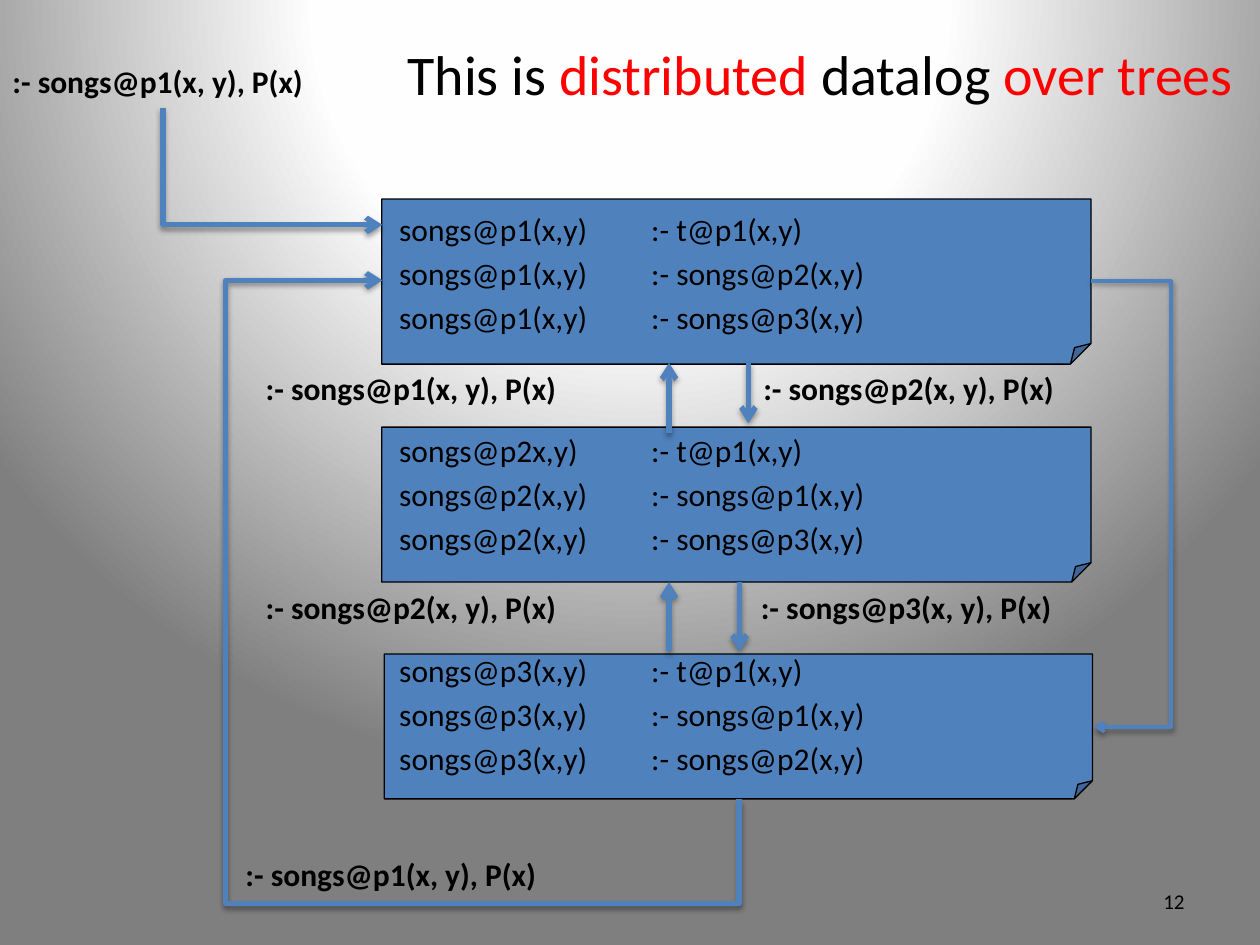
from typing import NamedTuple

from lxml.etree import SubElement
from pptx import Presentation
from pptx.dml.color import RGBColor
from pptx.enum.shapes import MSO_CONNECTOR, MSO_SHAPE
from pptx.enum.text import MSO_ANCHOR, MSO_AUTO_SIZE, PP_ALIGN
from pptx.oxml import parse_xml
from pptx.oxml.ns import nsdecls, qn
from pptx.util import Inches, Pt

BLACK = RGBColor(0x00, 0x00, 0x00)
RED = RGBColor(0xFF, 0x00, 0x00)
BLUE = RGBColor(0x4F, 0x81, 0xBD)
FONT = "Calibri"

COLUMNS, ROWS = 10, 7.5
SLIDE_WIDTH, SLIDE_HEIGHT = Inches(10), Inches(7.5)
RULE_PITCH = 1.75

SHADOW = (
    f'<a:effectLst {nsdecls("a")}><a:outerShdw blurRad="40000" dist="20000" dir="5400000" '
    'rotWithShape="0"><a:srgbClr val="000000"><a:alpha val="38000"/></a:srgbClr>'
    "</a:outerShdw></a:effectLst>"
)
BACKDROP = (
    f'<a:gradFill {nsdecls("a")} rotWithShape="1"><a:gsLst>'
    '<a:gs pos="0"><a:srgbClr val="FFFFFF"/></a:gs>'
    '<a:gs pos="40000"><a:srgbClr val="FEFEFE"/></a:gs>'
    '<a:gs pos="100000"><a:srgbClr val="7F7F7F"/></a:gs></a:gsLst>'
    '<a:path path="circle"><a:fillToRect l="50000" t="-80000" r="50000" b="180000"/>'
    "</a:path></a:gradFill>"
)


class Box(NamedTuple):
    left: float
    top: float
    width: float
    height: float


def across(columns):
    return round(SLIDE_WIDTH * columns / COLUMNS)


def down(rows):
    return round(SLIDE_HEIGHT * rows / ROWS)


def place(box):
    return across(box.left), down(box.top), across(box.width), down(box.height)


def add_run(paragraph, text, size, color=BLACK, bold=False):
    run = paragraph.add_run()
    run.text = text
    run.font.name = FONT
    run.font.size = Pt(size)
    run.font.bold = bold
    run.font.color.rgb = color


def add_guide(geometry, name, share):
    SubElement(geometry.get_or_add_avLst(), qn("a:gd"), name=name,
               fmla=f"val {round(share * 100000)}")


def backdrop(slide):
    slide.background.fill.solid()
    solid = next(slide.element.iter(qn("p:bgPr"))).find(qn("a:solidFill"))
    solid.getparent().replace(solid, parse_xml(BACKDROP))


def heading(slide, box, phrases):
    title = slide.shapes.title
    title.left, title.top, title.width, title.height = place(box)
    frame = title.text_frame
    frame.vertical_anchor = MSO_ANCHOR.TOP
    frame.margin_top = Inches(0.09)
    paragraph = frame.paragraphs[0]
    paragraph.alignment = PP_ALIGN.CENTER
    for text, color in phrases:
        add_run(paragraph, text, 32, color)


def page_number(slide, box, number):
    frame = slide.shapes.add_textbox(*place(box)).text_frame
    frame.word_wrap = True
    frame.vertical_anchor = MSO_ANCHOR.MIDDLE
    frame.paragraphs[0].alignment = PP_ALIGN.RIGHT
    add_run(frame.paragraphs[0], number, 12)


def query_label(slide, left, top, peer):
    frame = slide.shapes.add_textbox(*place(Box(left, top, 2.53, 0.4))).text_frame
    frame.word_wrap = False
    frame.auto_size = MSO_AUTO_SIZE.SHAPE_TO_FIT_TEXT
    add_run(frame.paragraphs[0], f":- songs@{peer}(x, y), P(x)", 18, bold=True)


def arrow(slide, start, end, weight=3, kind=MSO_CONNECTOR.STRAIGHT):
    connector = slide.shapes.add_connector(
        kind, across(start[0]), down(start[1]), across(end[0]), down(end[1]))
    connector.line.color.rgb = BLUE
    connector.line.width = Pt(weight)
    properties = connector._element.spPr
    SubElement(properties.find(qn("a:ln")), qn("a:tailEnd"), type="arrow")
    properties.append(parse_xml(SHADOW))
    return connector


def elbow_arrow(slide, box, preset, bends=(), weight=3, turn=0, flip=None):
    connector = arrow(slide, (box.left, box.top),
                      (box.left + box.width, box.top + box.height),
                      weight, MSO_CONNECTOR.ELBOW)
    properties = connector._element.spPr
    frame = properties.find(qn("a:xfrm"))
    if turn:
        frame.set("rot", str(turn * 60000))
    if flip:
        frame.set(flip, "1")
    geometry = properties.find(qn("a:prstGeom"))
    geometry.set("prst", preset)
    for position, bend in enumerate(bends, 1):
        add_guide(geometry, f"adj{position}", bend)


def peer_card(slide, box, rules_top, rules):
    card = slide.shapes.add_shape(MSO_SHAPE.FOLDED_CORNER, *place(box))
    add_guide(card._element.spPr.find(qn("a:prstGeom")), "adj", 0.125)
    card.shadow.inherit = False
    card.fill.solid()
    card.fill.fore_color.rgb = BLUE
    card.line.color.rgb = BLACK
    card.line.width = Pt(0.75)

    rules_box = Box(3.07, rules_top, box.width - 0.1, 1.1)
    frame = slide.shapes.add_textbox(*place(rules_box)).text_frame
    frame.word_wrap = True
    for row, (head, body) in enumerate(rules):
        paragraph = frame.paragraphs[0] if row == 0 else frame.add_paragraph()
        paragraph.space_before = Pt(3.6 if row else 0)
        tabs = SubElement(paragraph._p.get_or_add_pPr(), qn("a:tabLst"))
        SubElement(tabs, qn("a:tab"), pos=str(across(2)), algn="l")
        add_run(paragraph, f"{head}\t:- {body}", 18)


def exchange(slide, box, up_peer, down_peer, down_left, up_length, down_length):
    up_left = box.left + 3.3
    arrow(slide, (up_left, box.top + up_length), (up_left, box.top))
    arrow(slide, (down_left, box.top), (down_left, box.top + down_length))
    query_label(slide, box.left, box.top, up_peer)
    query_label(slide, box.left + box.width - 2.53, box.top, down_peer)


def main():
    deck = Presentation()
    deck.slide_width, deck.slide_height = SLIDE_WIDTH, SLIDE_HEIGHT
    slide = deck.slides.add_slide(deck.slide_layouts[5])
    backdrop(slide)
    heading(slide, Box(2.01, 0.22, 9, 1.25), [
        ("This is ", BLACK), ("distributed ", RED),
        ("datalog ", BLACK), ("over trees", RED)])

    peers = [
        (Box(3.03, 1.58, 5.63, 1.31), "songs@p1(x,y)", ("p2", "p3")),
        (Box(3.03, 3.39, 5.63, 1.23), "songs@p2x,y)", ("p1", "p3")),
        (Box(3.05, 5.19, 5.62, 1.15), "songs@p3(x,y)", ("p1", "p2")),
    ]
    for row, (box, first_head, others) in enumerate(peers):
        rules = [(first_head, "t@p1(x,y)")]
        rules += [(f"songs@p{row + 1}(x,y)", f"songs@{other}(x,y)") for other in others]
        peer_card(slide, box, 1.62 + row * RULE_PITCH, rules)

    exchange(slide, Box(2.01, 2.88, 6.48, 0.5), "p1", "p2", 5.94, 0.56, 0.48)
    exchange(slide, Box(2.01, 4.62, 6.46, 0.57), "p2", "p3", 5.87, 0.55, 0.55)

    query_label(slide, 0, 0.44, "p1")
    elbow_arrow(slide, Box(1.7, 0.45, 0.93, 1.74), "bentConnector2",
                turn=270, flip="flipH")
    query_label(slide, 1.85, 6.74, "p1")
    elbow_arrow(slide, Box(2.39, 2.87, 4.12, 2.83), "bentConnector4",
                (-0.2, 1.44), turn=270, flip="flipV")
    elbow_arrow(slide, Box(8.66, 2.23, 0.02, 3.54), "bentConnector3", (31.5,), weight=2)

    page_number(slide, Box(7.17, 6.95, 2.33, 0.4), "12")
    deck.save("out.pptx")


if __name__ == "__main__":
    main()
